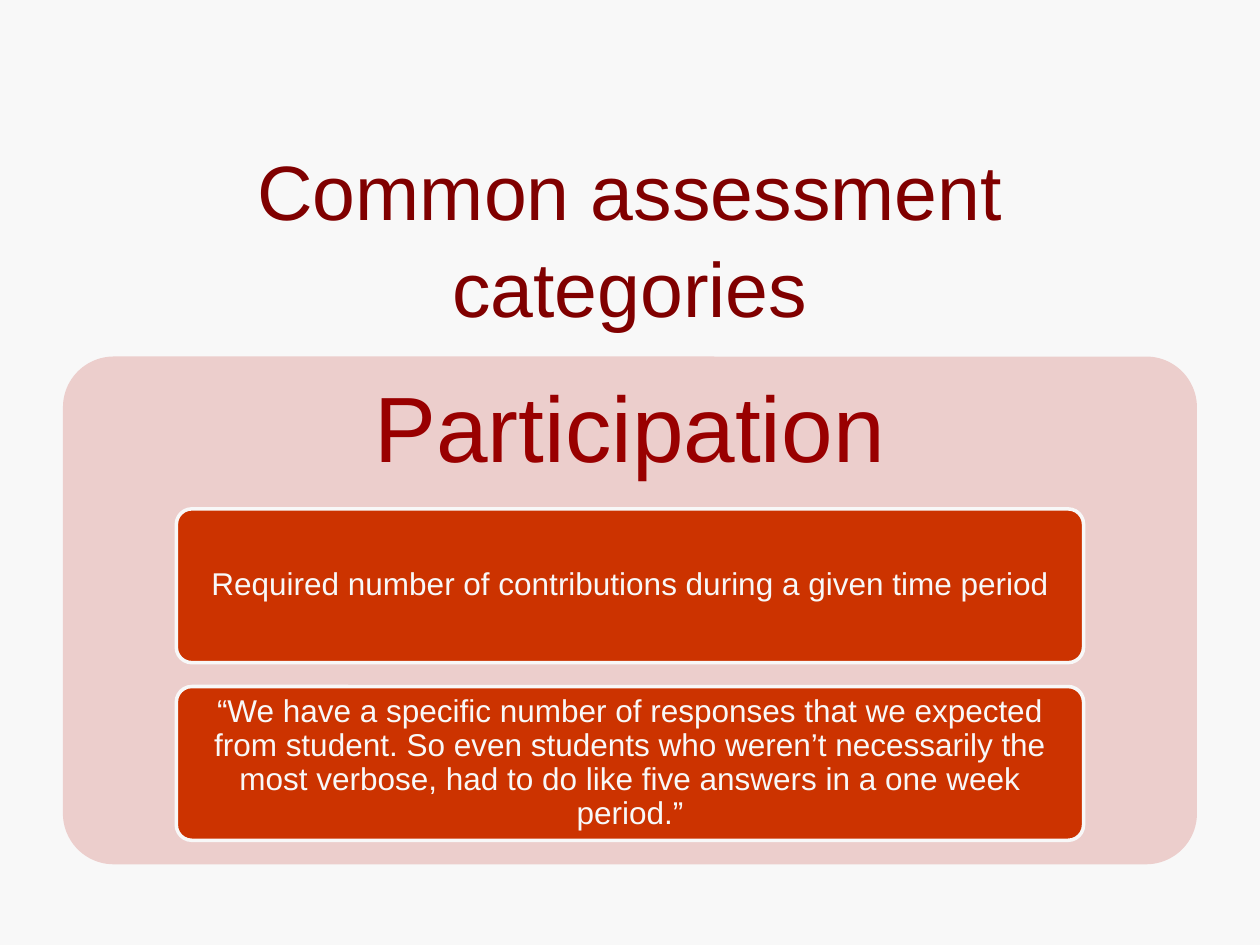
import pptx
import pptx.dml.color
import pptx.enum.shapes
import pptx.enum.text
import pptx.util
from pptx.util import Inches

FONT = "Arial"
PALE = "F8F8F8"
CARD_TEXTS = [
    "Required number of contributions during a given time period",
    "“We have a specific number of responses that we expected from student. "
    "So even students who weren’t necessarily the most verbose, had to do "
    "like five answers in a one week period.”",
]


def color(value):
    return pptx.dml.color.RGBColor.from_string(value)


def write(box, text, size, ink, spacing=0.9, inset_x=0.05, inset_y=0.04):
    """Put one centred paragraph into the middle of a box."""
    frame = box.text_frame
    frame.word_wrap = True
    frame.auto_size = pptx.enum.text.MSO_AUTO_SIZE.NONE
    frame.vertical_anchor = pptx.enum.text.MSO_ANCHOR.MIDDLE
    frame.margin_left = frame.margin_right = Inches(inset_x)
    frame.margin_top = frame.margin_bottom = Inches(inset_y)
    para = frame.paragraphs[0]
    para.alignment = pptx.enum.text.PP_ALIGN.CENTER
    para.line_spacing = spacing
    span = para.add_run()
    span.text = text
    span.font.name = FONT
    span.font.size = pptx.util.Pt(size)
    span.font.color.rgb = color(ink)


def add_rounded(shapes, left, top, width, height, fill, line=None):
    box = shapes.add_shape(
        pptx.enum.shapes.MSO_SHAPE.ROUNDED_RECTANGLE,
        Inches(left), Inches(top), Inches(width), Inches(height))
    box.adjustments[0] = 0.1
    box.shadow.inherit = False
    box.fill.solid()
    box.fill.fore_color.rgb = color(fill)
    if line:
        box.line.color.rgb = color(line)
        box.line.width = pptx.util.Pt(2)
    else:
        box.line.fill.background()
    return box


def place_title(page, left, top, width, height):
    title = page.shapes.title
    title.left, title.top = Inches(left), Inches(top)
    title.width, title.height = Inches(width), Inches(height)
    write(title, "Common assessment categories", 44, "800000",
          spacing=1.05, inset_x=0.1, inset_y=0.05)


def add_category(page, left, top, width, height, heading, texts):
    """Draw a panel with a heading over a stack of equal cards."""
    shapes = page.shapes.add_group_shape().shapes
    add_rounded(shapes, left, top, width, height, "ECCECC")

    heading_height = height * 0.3
    box = shapes.add_textbox(Inches(left), Inches(top),
                             Inches(width), Inches(heading_height))
    write(box, heading, 53, "990000", inset_x=0.22, inset_y=0.22)

    card_width, card_height, gap = width * 0.8, 1.22, 0.19
    card_left = left + (width - card_width) / 2
    for index, text in enumerate(texts):
        card_top = top + heading_height + index * (card_height + gap)
        card = add_rounded(shapes, card_left, card_top, card_width,
                           card_height, "CC3300", line=PALE)
        write(card, text, 18, PALE)


def main():
    deck = pptx.Presentation()
    deck.slide_width, deck.slide_height = Inches(10), Inches(7.5)
    page = deck.slides.add_slide(deck.slide_layouts[5])
    page.background.fill.solid()
    page.background.fill.fore_color.rgb = color(PALE)
    place_title(page, 0.5, 1.25, 9, 1.25)
    add_category(page, 0.5, 2.83, 9, 4.03, "Participation", CARD_TEXTS)
    deck.save("out.pptx")


if __name__ == "__main__":
    main()
